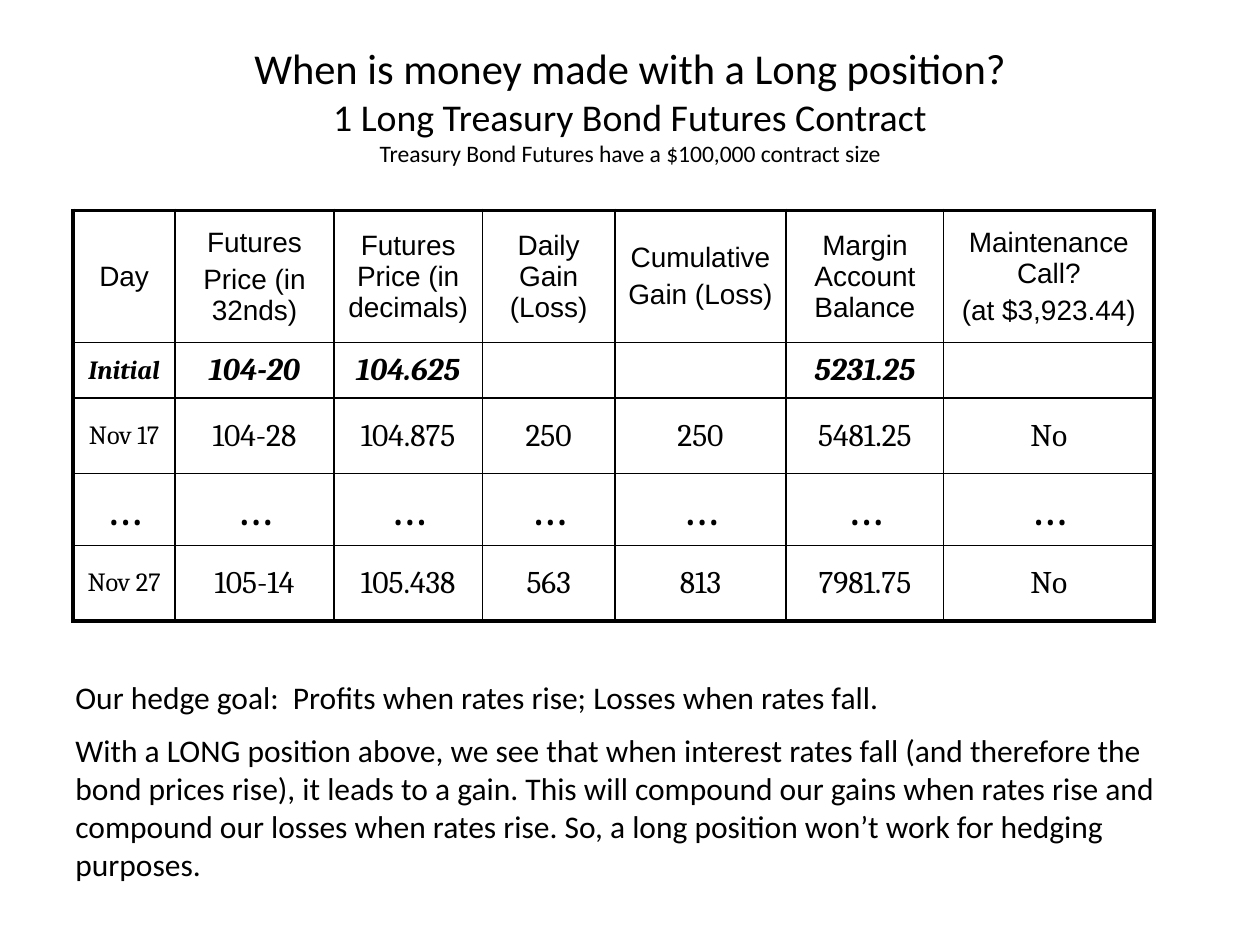
from lxml import etree
from pptx import Presentation
from pptx.dml.color import RGBColor
from pptx.enum.text import MSO_ANCHOR, MSO_AUTO_SIZE, PP_ALIGN
from pptx.oxml.ns import qn
from pptx.util import Inches, Pt

CENTER = PP_ALIGN.CENTER
LEFT = PP_ALIGN.LEFT
MIDDLE = MSO_ANCHOR.MIDDLE
NO_FIT = MSO_AUTO_SIZE.NONE
GROW = MSO_AUTO_SIZE.SHAPE_TO_FIT_TEXT
TITLE_ONLY = 5
BLACK = "000000"
THIN, THICK = 1, 2.25

TITLE_LINES = [
    ("When is money made with a Long position?", 24.3),
    ("1 Long Treasury Bond Futures Contract", 21.6),
    ("Treasury Bond Futures have a $100,000 contract size", 13.5),
]
COLUMN_WIDTHS = [0.81, 1.26, 1.18, 1.05, 1.36, 1.25, 1.67]
ROW_HEIGHTS = [1.05, 0.44, 0.6, 0.57, 0.6]
LEDGER = [
    ["Day", "Futures\nPrice (in 32nds)", "Futures Price (in decimals)", "Daily Gain (Loss)",
     "Cumulative\nGain (Loss)", "Margin Account Balance", "Maintenance Call?\n(at $3,923.44)"],
    ["Initial", "104-20", "104.625", "", "", "5231.25", ""],
    ["Nov 17", "104-28", "104.875", "250", "250", "5481.25", "No"],
    ["…"] * len(COLUMN_WIDTHS),
    ["Nov 27", "105-14", "105.438", "563", "813", "7981.75", "No"],
]
HEADER = {"name": "Arial", "size": Pt(16)}
FIGURES = {"name": "Cambria", "size": Pt(18)}
OPENING = {**FIGURES, "bold": True, "italic": True}
ELLIPSIS = {**FIGURES, "size": Pt(28)}
ROW_FORMATS = [HEADER, OPENING, FIGURES, ELLIPSIS, FIGURES]
DAY_SIZE = Pt(15)
CONCLUSIONS = [
    "Our hedge goal:  Profits when rates rise; Losses when rates fall.",
    "With a LONG position above, we see that when interest rates fall (and therefore the bond "
    "prices rise), it leads to a gain. This will compound our gains when rates rise and compound "
    "our losses when rates rise. So, a long position won’t work for hedging purposes.",
]


def color(value):
    return RGBColor.from_string(value)


class SlideBuilder:
    """Holds the text style and the current slide, and adds elements to it."""

    def __init__(self, page, font="Calibri", ink=BLACK):
        self.page = page
        self.font = font
        self.ink = ink

    def format_font(self, target, values):
        for name, value in {"name": self.font, **values}.items():
            setattr(target, name, value)
        target.color.rgb = color(self.ink)

    def paragraphs(self, frame, lines, values, align, spacing):
        for number, line in enumerate(lines):
            para = frame.paragraphs[0] if number == 0 else frame.add_paragraph()
            para.alignment = align
            para.space_before = Pt(round(values["size"].pt * spacing, 1))
            span = para.add_run()
            span.text = line
            self.format_font(span.font, values)

    def title(self, lines, left, top, width, height):
        box = self.page.shapes.title
        box.left, box.top = Inches(left), Inches(top)
        box.width, box.height = Inches(width), Inches(height)
        frame = box.text_frame
        frame.auto_size = NO_FIT
        frame.vertical_anchor = MIDDLE
        para = frame.paragraphs[0]
        para.alignment = CENTER
        for number, (line, size) in enumerate(lines):
            if number:
                para.add_line_break()
            span = para.add_run()
            span.text = line
            self.format_font(span.font, {"size": Pt(size)})

    def text(self, lines, left, top, width, height, size):
        box = self.page.shapes.add_textbox(
            Inches(left), Inches(top), Inches(width), Inches(height))
        frame = box.text_frame
        frame.word_wrap = True
        frame.auto_size = GROW
        self.paragraphs(frame, lines, {"size": Pt(size)}, LEFT, 0.5)

    def border(self, cell, side, width):
        properties = cell._tc.get_or_add_tcPr()
        line = etree.SubElement(properties, qn(f"a:ln{side}"), w=str(Pt(width)))
        fill = etree.SubElement(line, qn("a:solidFill"))
        etree.SubElement(fill, qn("a:srgbClr"), val=self.ink)

    def table(self, rows, formats, left, top, widths, heights):
        table = self.page.shapes.add_table(
            len(rows), len(widths), Inches(left), Inches(top),
            Inches(sum(widths)), Inches(sum(heights))).table
        table.first_row = False
        table.horz_banding = False
        for column, width in zip(table.columns, widths):
            column.width = Inches(width)
        for row, height in zip(table.rows, heights):
            row.height = Inches(height)
        last_row, last_column = len(rows) - 1, len(widths) - 1
        for r, (texts, values) in enumerate(zip(rows, formats)):
            for c, content in enumerate(texts):
                cell = table.cell(r, c)
                outer = {"L": c == 0, "R": c == last_column, "T": r == 0, "B": r == last_row}
                for side, is_outer in outer.items():
                    self.border(cell, side, THICK if is_outer else THIN)
                cell.fill.background()
                cell.vertical_anchor = MIDDLE
                if content:
                    is_day = c == 0 and values["size"] == FIGURES["size"]
                    style = {**values, "size": DAY_SIZE} if is_day else values
                    self.paragraphs(cell.text_frame, content.split("\n"), style, CENTER, 0.2)


def main():
    deck = Presentation()
    deck.slide_width, deck.slide_height = Inches(10), Inches(7.5)
    builder = SlideBuilder(deck.slides.add_slide(deck.slide_layouts[TITLE_ONLY]))
    builder.title(TITLE_LINES, 0.75, 0.33, 8.5, 1)
    builder.table(LEDGER, ROW_FORMATS, 0.58, 1.67, COLUMN_WIDTHS, ROW_HEIGHTS)
    builder.text(CONCLUSIONS, 0.5, 5.33, 8.92, 1.77, 18)
    deck.save("out.pptx")


if __name__ == "__main__":
    main()
